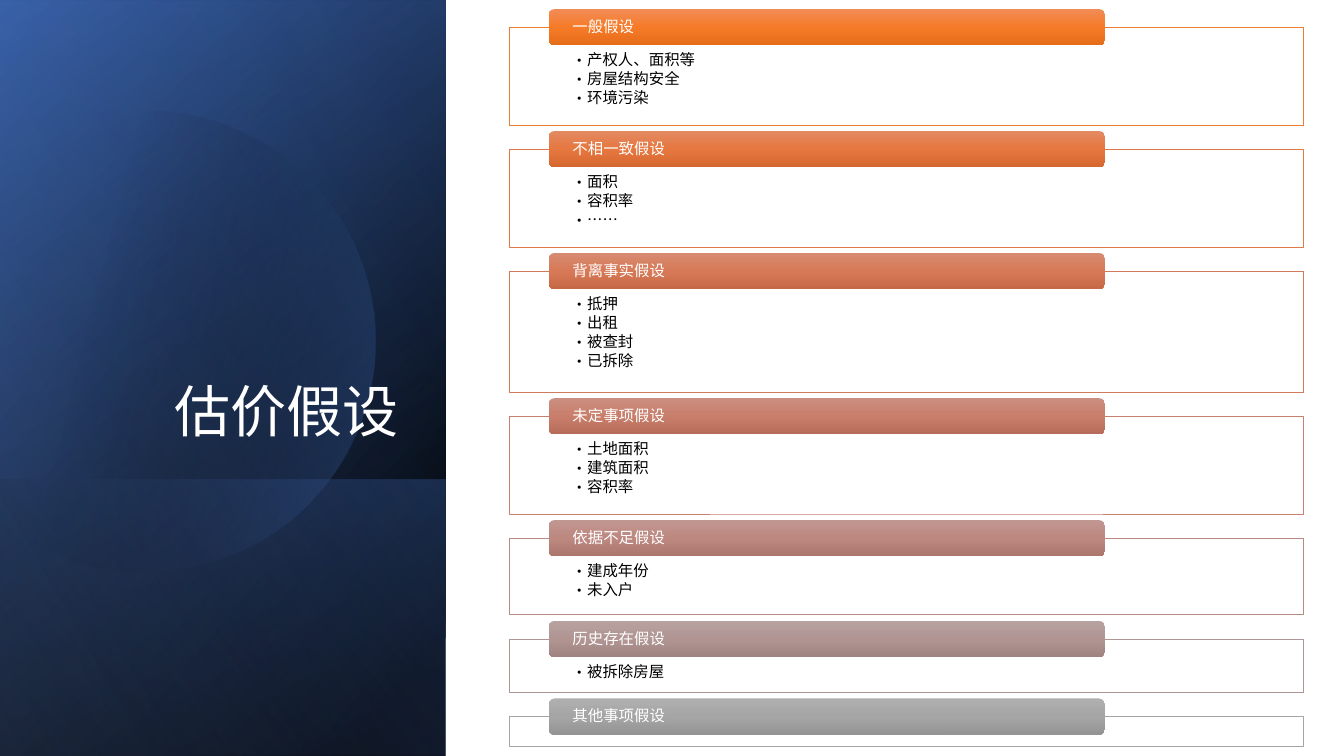
"""Build the slide on valuation assumptions."""
from dataclasses import dataclass

from lxml import etree
from pptx import Presentation
from pptx.dml.color import RGBColor
from pptx.enum import shapes, text
from pptx.oxml import ns
from pptx.util import Inches, Pt

FONT = "Noto Sans CJK SC"
HUES = {
    "white": "FFFFFF", "black": "000000",
    "navy": "2F5597", "blue": "4472C4", "pale": "8FAADC",
}
TONES = {
    "一般假设": ("ED7D31", "F18C57", "F67B28", "E56C19"),
    "不相一致假设": ("DE7A47", "E38A63", "E6773F", "D56730"),
    "背离事实假设": ("D17B5C", "D78B72", "D77956", "C66846"),
    "未定事项假设": ("C48170", "CB8F81", "C97E6B", "B76D5B"),
    "依据不足假设": ("B98A82", "C19791", "BC8880", "AA766E"),
    "历史存在假设": ("AE9694", "B7A2A0", "B09593", "9E8381"),
    "其他事项假设": ("A5A5A5", "AFAFAF", "A5A5A5", "939393"),
}


@dataclass
class Stop:
    """One gradient stop, with position and opacity in percent."""
    pos: int
    hue: str
    alpha: int = 100


@dataclass
class Panel:
    """One turned gradient panel on the left."""
    left: float
    top: float
    width: float
    angle: int
    stops: tuple[Stop, ...]


@dataclass
class Card:
    """One assumption with its examples."""
    name: str
    height: float
    items: tuple[str, ...] = ()


PANELS = (
    Panel(-1.54, 1.54, 7.5, 50,
          (Stop(8, HUES["black"]), Stop(100, HUES["navy"]))),
    Panel(-1.54, 1.55, 7.5, 30,
          (Stop(0, HUES["black"], 0), Stop(99, HUES["blue"], 46))),
    Panel(0.84, 3.92, 2.74, 130,
          (Stop(2, HUES["blue"], 29), Stop(100, HUES["black"], 30))),
)
SHEEN = Panel(-1.54, 1.54, 7.5, 120,
              (Stop(0, HUES["black"], 0), Stop(99, HUES["pale"], 11)))
DISC = (Stop(29, HUES["black"], 0), Stop(100, HUES["blue"], 43))
RIM = ((0, 1.61), (0.23, 1.42), (0.5, 1.28), (0.8, 1.19),
       (1.03, 1.13), (1.26, 1.1), (1.49, 1.1),
       (2.46, 1.12), (3.35, 1.77), (3.63, 2.75),
       (3.98, 3.97), (3.28, 5.23), (2.07, 5.58),
       (1.31, 5.8), (0.53, 5.61), (-0.03, 5.14),
       (-0.15, 5.03), (-0.15, 1.75))
BENDS = 5
CARDS = (
    Card("一般假设", 0.97, ("产权人、面积等", "房屋结构安全", "环境污染")),
    Card("不相一致假设", 0.97, ("面积", "容积率", "……")),
    Card("背离事实假设", 1.2, ("抵押", "出租", "被查封", "已拆除")),
    Card("未定事项假设", 0.97, ("土地面积", "建筑面积", "容积率")),
    Card("依据不足假设", 0.76, ("建成年份", "未入户")),
    Card("历史存在假设", 0.53, ("被拆除房屋",)),
    Card("其他事项假设", 0.3),
)


def shade(shape, angle: int, stops: tuple[Stop, ...]) -> None:
    """Fill a shape with a linear gradient and no outline."""
    shape.shadow.inherit = False
    shape.line.fill.background()
    shape.fill.background()
    old = shape._element.spPr.find(ns.qn("a:noFill"))
    grad = etree.Element(ns.qn("a:gradFill"), rotWithShape="1")
    row = etree.SubElement(grad, ns.qn("a:gsLst"))
    for stop in stops:
        mark = etree.SubElement(row, ns.qn("a:gs"), pos=str(stop.pos * 1000))
        hue = etree.SubElement(mark, ns.qn("a:srgbClr"), val=stop.hue)
        if stop.alpha < 100:
            etree.SubElement(hue, ns.qn("a:alpha"), val=str(stop.alpha * 1000))
    etree.SubElement(grad, ns.qn("a:lin"), ang=str(angle * 60000), scaled="0")
    old.getparent().replace(old, grad)


def style(para, size: float, hue: str, after: float = 0) -> None:
    """Set the font and spacing of a paragraph."""
    para.line_spacing = 0.9
    para.space_before, para.space_after = Pt(0), Pt(after)
    para.font.size, para.font.name = Pt(size), FONT
    para.font.color.rgb = RGBColor.from_string(hue)
    base = para._p.pPr.find(ns.qn("a:defRPr"))
    latin = base.find(ns.qn("a:latin"))
    latin.addnext(etree.Element(ns.qn("a:ea"), typeface=FONT))


def bullet(para) -> None:
    """Give a paragraph a hanging bullet."""
    props = para._p.pPr
    props.set("marL", str(Inches(0.06)))
    props.set("indent", str(-Inches(0.06)))
    base = props.find(ns.qn("a:defRPr"))
    base.addprevious(etree.Element(ns.qn("a:buFont"), typeface=FONT))
    base.addprevious(etree.Element(ns.qn("a:buChar"), char="•"))


def draw_panel(slide, panel: Panel) -> None:
    """Draw one turned and mirrored panel."""
    shape = slide.shapes.add_shape(
        shapes.MSO_SHAPE.RECTANGLE, Inches(panel.left), Inches(panel.top),
        Inches(panel.width), Inches(4.42))
    shape.rotation = 90
    shape._element.spPr.xfrm.set("flipH", "1")
    shade(shape, panel.angle, panel.stops)


def draw_disc(slide) -> None:
    """Draw the large disc, cut off at the left."""
    rim = [(Inches(x), Inches(y)) for x, y in RIM]
    pen = slide.shapes.build_freeform(*rim[0])
    pen.add_line_segments(rim[1:], close=True)
    disc = pen.convert_to_shape()
    legs = list(disc._element.iter(ns.qn("a:lnTo")))
    for i in range(0, BENDS * 3, 3):
        bend = etree.Element(ns.qn("a:cubicBezTo"))
        legs[i].addprevious(bend)
        for leg in legs[i:i + 3]:
            bend.append(leg[0])
            leg.getparent().remove(leg)
    shade(disc, 14, DISC)


def draw_title(slide) -> None:
    """Place the title over the panels."""
    title = slide.shapes.title
    slide.shapes._spTree.append(title._element)
    title.left, title.top = Inches(0.64), Inches(1.84)
    title.width, title.height = Inches(3.41), Inches(2.62)
    frame = title.text_frame
    frame.text = "估价假设"
    frame.auto_size = text.MSO_AUTO_SIZE.NONE
    frame.vertical_anchor = text.MSO_ANCHOR.BOTTOM
    para = frame.paragraphs[0]
    para.alignment = text.PP_ALIGN.RIGHT
    style(para, 40, HUES["white"])


def draw_card(slide, card: Card, top: float) -> None:
    """Draw one framed list with its tab."""
    edge, *tones = TONES[card.name]
    box = slide.shapes.add_shape(
        shapes.MSO_SHAPE.RECTANGLE, Inches(5.05), Inches(top),
        Inches(7.88), Inches(card.height))
    box.shadow.inherit = False
    box.fill.solid()
    box.fill.fore_color.rgb = RGBColor.from_string(HUES["white"])
    box.line.color.rgb = RGBColor.from_string(edge)
    box.line.width = Pt(0.5)
    frame = box.text_frame
    frame.vertical_anchor = text.MSO_ANCHOR.TOP
    frame.margin_left = frame.margin_right = Inches(0.62)
    frame.margin_top, frame.margin_bottom = Inches(0.25), Inches(0.09)
    if card.items:
        frame.text = "\n".join(card.items)
        for para in frame.paragraphs:
            para.alignment = text.PP_ALIGN.LEFT
            style(para, 11, HUES["black"], 1.65)
            bullet(para)

    tab = slide.shapes.add_shape(
        shapes.MSO_SHAPE.ROUNDED_RECTANGLE, Inches(5.44), Inches(top - 0.18),
        Inches(5.52), Inches(0.36))
    shade(tab, 90, tuple(Stop(50 * i, hue) for i, hue in enumerate(tones)))
    frame = tab.text_frame
    frame.text = card.name
    frame.vertical_anchor = text.MSO_ANCHOR.MIDDLE
    frame.margin_left = frame.margin_right = Inches(0.22)
    frame.margin_top = frame.margin_bottom = 0
    para = frame.paragraphs[0]
    para.alignment = text.PP_ALIGN.LEFT
    style(para, 11, HUES["white"])


def main() -> None:
    """Build and save the slide."""
    deck = Presentation()
    deck.slide_width, deck.slide_height = Inches(13.33), Inches(7.5)
    slide = deck.slides.add_slide(deck.slide_layouts[5])
    for panel in PANELS:
        draw_panel(slide, panel)
    draw_disc(slide)
    draw_panel(slide, SHEEN)
    draw_title(slide)
    top = 0.27
    for card in CARDS:
        draw_card(slide, card, top)
        top += card.height + 0.24
    deck.save("out.pptx")


if __name__ == "__main__":
    main()
